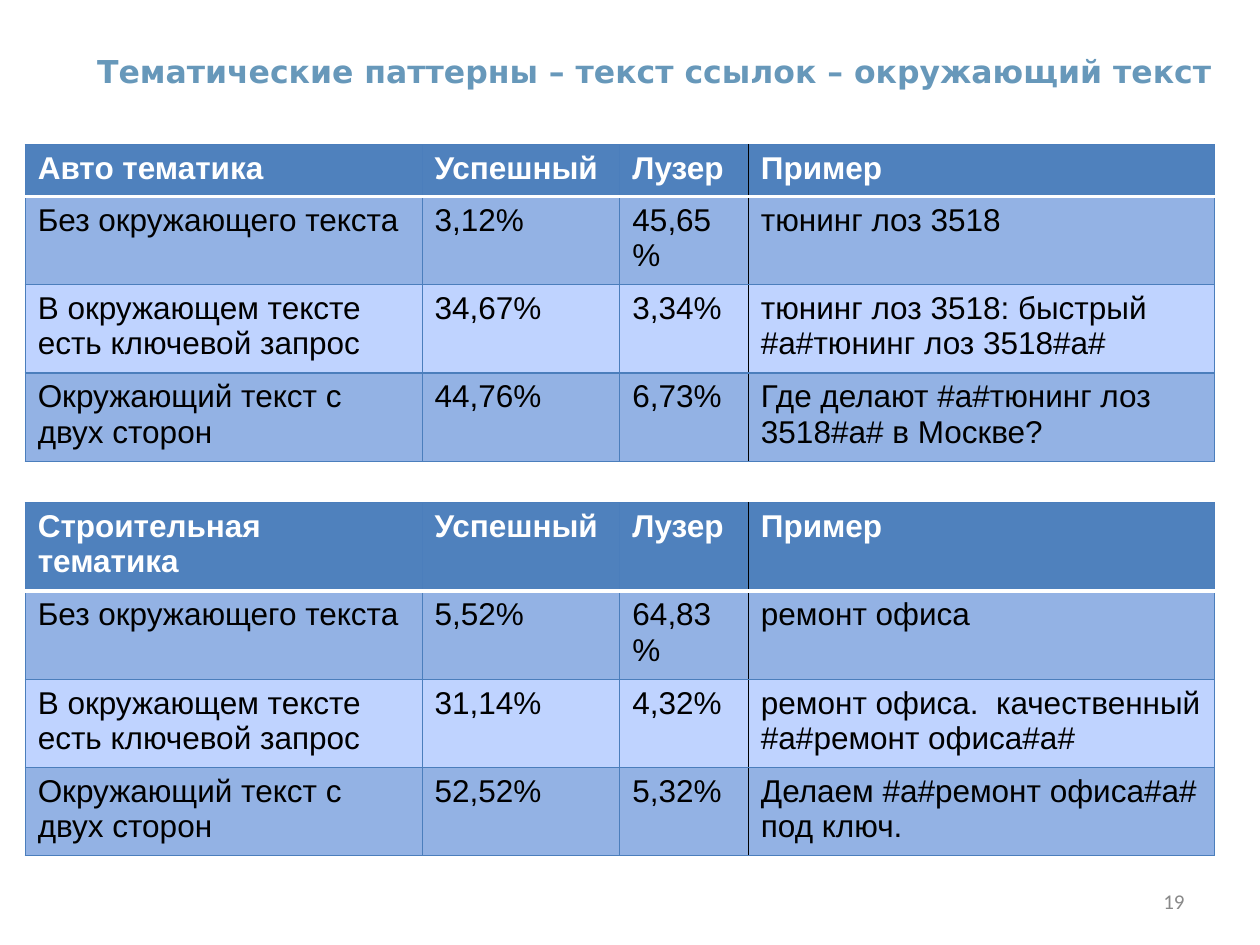
import pptx
import pptx.dml.color
import pptx.enum.text
import pptx.oxml
import pptx.oxml.ns
import pptx.util
from pptx.util import Inches

RGBColor = pptx.dml.color.RGBColor
Alignment = pptx.enum.text.PP_ALIGN
Anchor = pptx.enum.text.MSO_ANCHOR

TITLE_BLUE = RGBColor(0x67, 0x98, 0xBA)
HEADER_BLUE = RGBColor(0x4F, 0x81, 0xBD)
BORDER_BLUE = RGBColor(0x4B, 0x7E, 0xBC)
ROW_DARK = RGBColor(0x93, 0xB2, 0xE4)
ROW_LIGHT = RGBColor(0xBF, 0xD3, 0xFF)
NUMBER_GRAY = RGBColor(0x89, 0x89, 0x89)
WHITE = RGBColor(0xFF, 0xFF, 0xFF)
BLACK = RGBColor(0x00, 0x00, 0x00)

COLUMN_WIDTHS = (3.15, 1.57, 1.02, 3.7)
ROW_HEIGHT = 0.41
HEADINGS = ("Успешный", "Лузер", "Пример")
PATTERNS = (
    "Без окружающего текста",
    "В окружающем тексте есть ключевой запрос",
    "Окружающий текст с двух сторон",
)
TOPICS = (
    (1.15, "Авто тематика", (
        ("3,12%", "45,65%", "тюнинг лоз 3518"),
        ("34,67%", "3,34%", "тюнинг лоз 3518: быстрый #a#тюнинг лоз 3518#a#"),
        ("44,76%", "6,73%", "Где делают #a#тюнинг лоз 3518#a# в Москве?"),
    )),
    (3.99, "Строительная тематика", (
        ("5,52%", "64,83%", "ремонт офиса"),
        ("31,14%", "4,32%", "ремонт офиса.  качественный #a#ремонт офиса#a#"),
        ("52,52%", "5,32%", "Делаем #a#ремонт офиса#a# под ключ."),
    )),
)


def write_text(frame, text, font="Arial", size=18, color=BLACK, bold=False,
               alignment=Alignment.LEFT):
    """Write one formatted paragraph into a text frame."""
    paragraph = frame.paragraphs[0]
    paragraph.alignment = alignment
    run = paragraph.add_run()
    run.text = text
    run.font.name = font
    run.font.size = pptx.util.Pt(size)
    run.font.bold = bold
    run.font.color.rgb = color


def add_border(cell, side, color, width):
    """Add a solid border to one side (L, R, T or B) of a cell."""
    properties = cell._tc.get_or_add_tcPr()
    properties.append(pptx.oxml.parse_xml(
        f'<a:ln{side} {pptx.oxml.ns.nsdecls("a")} w="{pptx.util.Pt(width)}">'
        f'<a:solidFill><a:srgbClr val="{color}"/></a:solidFill></a:ln{side}>'))


def format_cell(cell, row, column):
    """Give a cell its borders and fill according to its place in the table."""
    thin, divider, rule = (BORDER_BLUE, 0.75), (BLACK, 1), (WHITE, 2)
    add_border(cell, "L", *(divider if column == 3 else thin))
    add_border(cell, "R", *(divider if column == 2 else thin))
    add_border(cell, "T", *(rule if row == 1 else thin))
    add_border(cell, "B", *(rule if row == 0 else thin))
    cell.fill.solid()
    cell.fill.fore_color.rgb = (
        HEADER_BLUE if row == 0 else ROW_DARK if row % 2 else ROW_LIGHT)


def add_topic_table(slide, left, top, topic, results):
    """Add the table of link patterns for one topic."""
    rows = [(topic, *HEADINGS)]
    rows += [(pattern, *values) for pattern, values in zip(PATTERNS, results)]
    table = slide.shapes.add_table(
        len(rows), len(COLUMN_WIDTHS), Inches(left), Inches(top),
        Inches(sum(COLUMN_WIDTHS)), Inches(ROW_HEIGHT * len(rows))).table
    table.horz_banding = False
    for column, width in zip(table.columns, COLUMN_WIDTHS):
        column.width = Inches(width)
    for row, texts in enumerate(rows):
        table.rows[row].height = Inches(ROW_HEIGHT)
        for column, text in enumerate(texts):
            cell = table.cell(row, column)
            format_cell(cell, row, column)
            write_text(cell.text_frame, text, bold=row == 0,
                       color=BLACK if row else WHITE)


def place_title(slide, left, top, width, height):
    """Move the title placeholder into its box and fill it."""
    title = slide.shapes.title
    title.left, title.top = Inches(left), Inches(top)
    title.width, title.height = Inches(width), Inches(height)
    frame = title.text_frame
    frame.auto_size = pptx.enum.text.MSO_AUTO_SIZE.NONE
    frame.word_wrap = True
    frame.vertical_anchor = Anchor.TOP
    write_text(frame, "Тематические паттерны – текст ссылок – окружающий текст",
               font="DejaVu Sans", color=TITLE_BLUE, bold=True)


def add_slide_number(slide, left, top, width, height):
    """Add the slide number at the right of its box."""
    frame = slide.shapes.add_textbox(
        Inches(left), Inches(top), Inches(width), Inches(height)).text_frame
    frame.word_wrap = True
    frame.vertical_anchor = Anchor.MIDDLE
    write_text(frame, "19", font="Calibri", size=12, color=NUMBER_GRAY,
               alignment=Alignment.RIGHT)


def main():
    """Build and save the presentation."""
    presentation = pptx.Presentation()
    presentation.slide_width = Inches(10)
    presentation.slide_height = Inches(7.5)
    slide = presentation.slides.add_slide(presentation.slide_layouts[5])
    add_slide_number(slide, 7.17, 6.95, 2.33, 0.4)
    place_title(slide, 0.67, 0.36, 9.33, 0.4)
    for top, topic, results in TOPICS:
        add_topic_table(slide, 0.2, top, topic, results)
    presentation.save("out.pptx")


if __name__ == "__main__":
    main()
